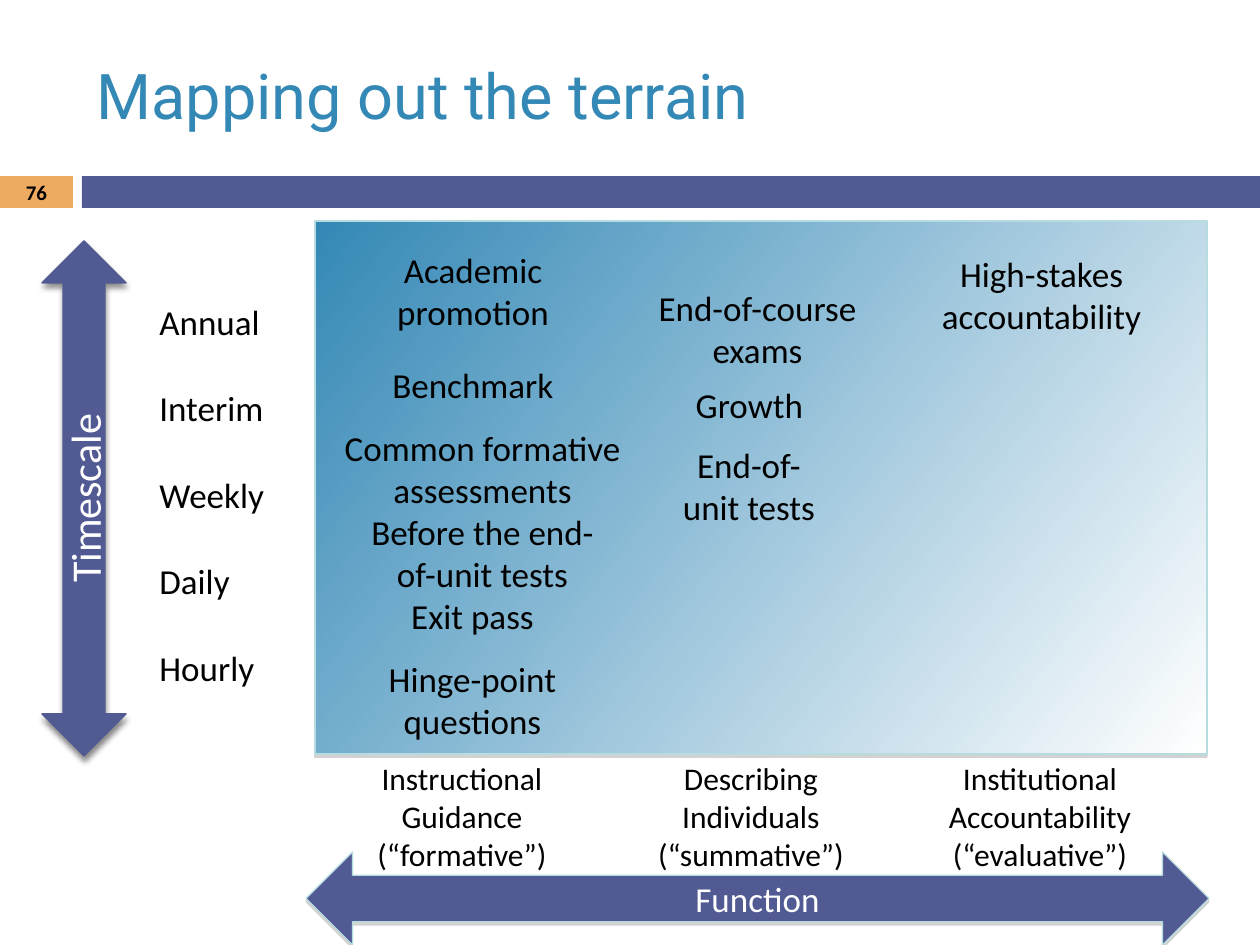
from lxml.etree import SubElement
from pptx import Presentation
from pptx.dml.color import RGBColor
from pptx.enum.shapes import MSO_SHAPE as SHAPE
from pptx.enum.text import MSO_ANCHOR as ANCHOR, MSO_AUTO_SIZE as AUTO, PP_ALIGN as ALIGN
from pptx.oxml.ns import qn
from pptx.util import Emu, Pt

PX = 914400 / 126

BLACK = RGBColor(0x00, 0x00, 0x00)
WHITE = RGBColor(0xFF, 0xFF, 0xFF)
BLUE = RGBColor(0x34, 0x88, 0xB6)
INDIGO = RGBColor(0x52, 0x5A, 0x93)
ORANGE = RGBColor(0xED, 0xAA, 0x61)
PALE_TEAL = RGBColor(0xB6, 0xDC, 0xDF)

TITLE = "Mapping out the terrain"
PAGE_NUMBER = "76"
TIMESCALES = ["Annual", "Interim", "Weekly", "Daily", "Hourly"]
FUNCTIONS = [
    "Instructional Guidance (“formative”)",
    "Describing Individuals\n(“summative”)",
    "Institutional Accountability (“evaluative”)",
]
# text, (left, top, width, height) in px; \v is a line break
ASSESSMENTS = [
    ("Academic promotion", (363, 242, 220, 97)),
    ("Benchmark", (368, 357, 210, 55)),
    ("Common formative assessments", (325, 420, 315, 97)),
    ("Before the end-\vof-unit tests", (325, 504, 315, 97)),
    ("Exit pass", (394, 588, 157, 55)),
    ("Hinge-point\nquestions", (373, 651, 199, 97)),
    ("End-of-course exams", (642, 280, 231, 97)),
    ("Growth", (660, 377, 179, 55)),
    ("End-of-unit tests", (668, 437, 162, 97)),
    ("High-stakes accountability", (926, 246, 231, 97)),
]

ROW_LEFT, ROW_TOP, ROW_STEP = 147, 294, 86.5
COLUMN_LEFT, COLUMN_TOP, COLUMN_STEP = 336, 753, 289
PANEL_SHADOW = dict(color="808080", alpha=35, blur=0, distance=1.8)
TIMESCALE_SHADOW = dict(color="000000", alpha=45, blur=3, distance=2.4)


def emu(*lengths):
    return [Emu(round(length * PX)) for length in lengths]


def write(frame, text, size=20, color=BLACK, font="Calibri", bold=False,
          align=ALIGN.CENTER, anchor=ANCHOR.TOP):
    frame.word_wrap = True
    frame.vertical_anchor = anchor
    frame.text = text
    for paragraph in frame.paragraphs:
        paragraph.alignment = align
        for run in paragraph.runs:
            run.font.name = font
            run.font.size = Pt(size)
            run.font.bold = bold
            run.font.color.rgb = color


def add_label(slide, text, box, **text_format):
    label = slide.shapes.add_textbox(*emu(*box))
    write(label.text_frame, text, **text_format)
    label.text_frame.auto_size = AUTO.SHAPE_TO_FIT_TEXT


def add_block(slide, kind, box, fill, line=None, line_width=0.75, shadow=None):
    block = slide.shapes.add_shape(kind, *emu(*box))
    block.shadow.inherit = False
    block.fill.solid()
    block.fill.fore_color.rgb = fill
    if line is None:
        block.line.fill.background()
    else:
        block.line.color.rgb = line
        block.line.width = Pt(line_width)
    if shadow:
        drop_shadow(block, **shadow)
    return block


def drop_shadow(block, color, alpha, blur, distance):
    """Cast a shadow straight down; blur and distance are in points."""
    effects = block._element.spPr.find(qn("a:effectLst"))
    outer = SubElement(effects, qn("a:outerShdw"), blurRad=str(Pt(blur)),
                       dist=str(Pt(distance)), dir="5400000", rotWithShape="0")
    shade = SubElement(outer, qn("a:srgbClr"), val=color)
    SubElement(shade, qn("a:alpha"), val=str(alpha * 1000))


def fade(block, start, end, clockwise_angle):
    block.fill.gradient()
    block.fill.gradient_angle = 360 - clockwise_angle
    for stop, color, position in zip(block.fill.gradient_stops, (start, end), (0, 1)):
        stop.color.rgb = color
        stop.position = position


def add_header(slide):
    add_block(slide, SHAPE.RECTANGLE, (0, 176, 73, 32), ORANGE)
    add_block(slide, SHAPE.RECTANGLE, (82, 176, 1178, 32), INDIGO)
    title = slide.shapes.title
    title.left, title.top, title.width, title.height = emu(84, 21, 1113, 147)
    write(title.text_frame, TITLE, size=36, color=BLUE, font="Roboto",
          align=ALIGN.LEFT, anchor=ANCHOR.MIDDLE)
    number = slide.shapes.add_textbox(*emu(0, 175, 73, 34))
    write(number.text_frame, PAGE_NUMBER, size=11.9, bold=True, anchor=ANCHOR.MIDDLE)


def add_axes(slide):
    function_arrow = add_block(slide, SHAPE.LEFT_RIGHT_ARROW, (306, 852, 903, 93),
                               INDIGO, PALE_TEAL, shadow=PANEL_SHADOW)
    write(function_arrow.text_frame, "Function", color=WHITE, anchor=ANCHOR.MIDDLE)

    timescale_arrow = add_block(slide, SHAPE.UP_DOWN_ARROW, (42, 241, 84, 515),
                                INDIGO, INDIGO, 0.79, TIMESCALE_SHADOW)
    write(timescale_arrow.text_frame, "Timescale", size=24, color=WHITE,
          anchor=ANCHOR.MIDDLE)
    timescale_arrow.text_frame._txBody.bodyPr.set("vert", "vert270")

    for row, timescale in enumerate(TIMESCALES):
        add_label(slide, timescale, (ROW_LEFT, ROW_TOP + row * ROW_STEP, 168, 55),
                  align=ALIGN.LEFT)
    for column, function in enumerate(FUNCTIONS):
        add_label(slide, function,
                  (COLUMN_LEFT + column * COLUMN_STEP, COLUMN_TOP, 252, 127), size=18)


def main():
    deck = Presentation()
    deck.slide_width, deck.slide_height = emu(1260, 945)
    slide = deck.slides.add_slide(deck.slide_layouts[5])

    add_header(slide)
    terrain = add_block(slide, SHAPE.RECTANGLE, (315, 221, 892, 533), BLUE, PALE_TEAL,
                        shadow=PANEL_SHADOW)
    fade(terrain, BLUE, WHITE, clockwise_angle=38)
    add_axes(slide)
    for assessment, box in ASSESSMENTS:
        add_label(slide, assessment, box)

    deck.save("out.pptx")


if __name__ == "__main__":
    main()
